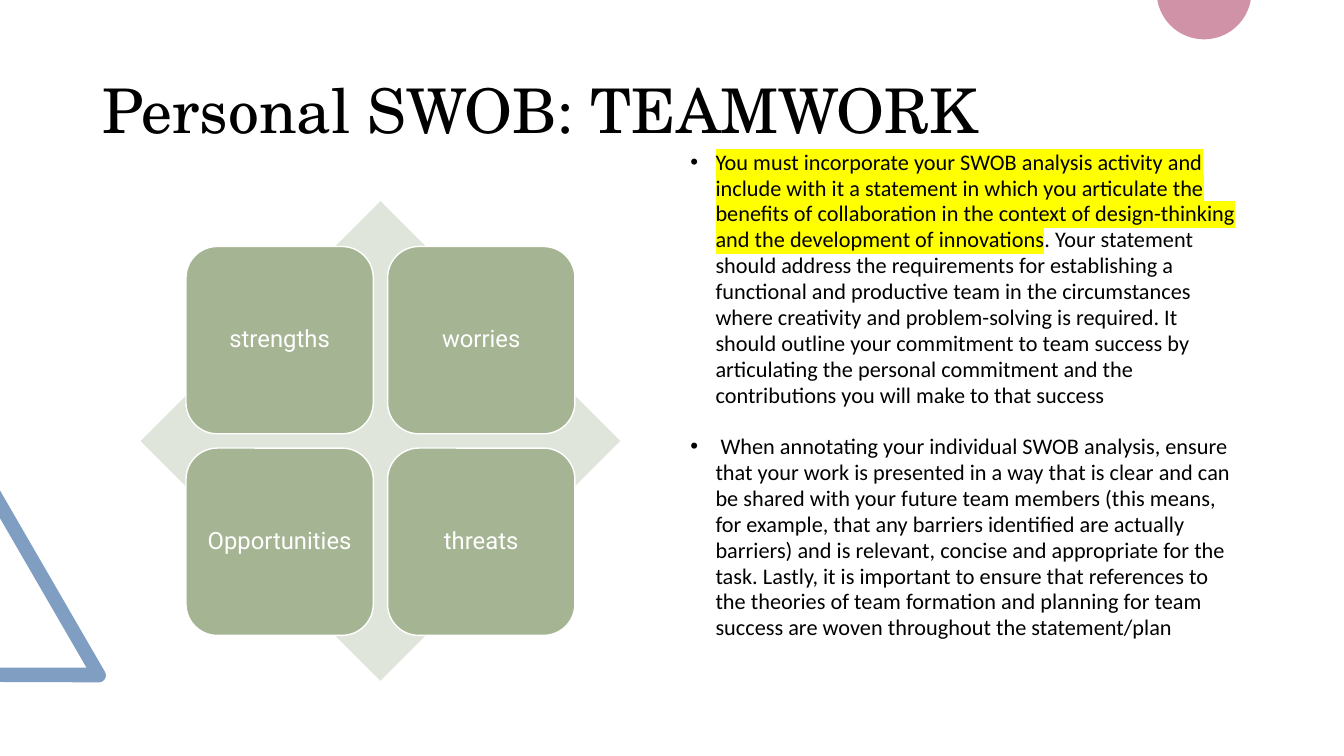
import math

import lxml.etree
import pptx
import pptx.dml.color
import pptx.enum.shapes
import pptx.enum.text
import pptx.oxml.ns
import pptx.util

COLORS = {
    "triangle": "809EC2", "circle": "D092A7", "diamond": "E0E5DB",
    "tile": "A5B492", "white": "FFFFFF", "black": "000000", "marker": "FFFF00",
}
COLUMNS, ROWS = 160, 90
UNIT = pptx.util.Pt(6)  # side of one square grid cell
SHAPES = pptx.enum.shapes.MSO_SHAPE
MIDDLE = pptx.enum.text.MSO_ANCHOR.MIDDLE


def rgb(name):
    return pptx.dml.color.RGBColor.from_string(COLORS[name])


def add_span(para, text, font, size, color):
    span = para.add_run()
    span.text = text
    span.font.name = font
    span.font.size = pptx.util.Pt(size)
    span.font.color.rgb = rgb(color)
    return span


deck = pptx.Presentation()
deck.slide_width = COLUMNS * UNIT
deck.slide_height = ROWS * UNIT
page = deck.slides.add_slide(deck.slide_layouts[6])

# Corner decorations: straight outline points, then an arc
# (centre column, centre row, radius, first and last angle)
decorations = [
    ("triangle", [(0, 81.2), (0, 79.5), (10.3, 79.5), (0, 61.7), (0, 58.4)],
     (11.76, 80.4, 0.84, -30, 90)),
    ("circle", [], (143.34, -0.96, 5.64, 9.8, 170.2)),
]
ARC_STEPS = 48
for color, points, (column, row, radius, first, last) in decorations:
    outline = list(points)
    for step in range(ARC_STEPS + 1):
        angle = math.radians(first + (last - first) * step / ARC_STEPS)
        outline.append((column + radius * math.cos(angle), row + radius * math.sin(angle)))
    outline = [(x * UNIT, y * UNIT) for x, y in outline]
    builder = page.shapes.build_freeform(*outline[0])
    builder.add_line_segments(outline[1:], close=True)
    decoration = builder.convert_to_shape()
    decoration.shadow.inherit = False
    decoration.fill.solid()
    decoration.fill.fore_color.rgb = rgb(color)
    decoration.line.fill.background()

# Title
title = page.shapes.add_textbox(
    *(int(cells * UNIT) for cells in (11, 4.8, 138, 17.4))).text_frame
title.word_wrap = True
title.vertical_anchor = MIDDLE
title.paragraphs[0].line_spacing = 0.9
add_span(title.paragraphs[0], "Personal SWOB: TEAMWORK", "TeX Gyre Schola", 44, "black")

# Matrix: four tiles around the centre of a diamond
CENTER_COLUMN, CENTER_ROW = 45.3, 52.5
DIAMOND, TILE, PITCH = 57.1, 22.3, 24
diamond = page.shapes.add_shape(
    SHAPES.DIAMOND, int((CENTER_COLUMN - DIAMOND / 2) * UNIT),
    int((CENTER_ROW - DIAMOND / 2) * UNIT), int(DIAMOND * UNIT), int(DIAMOND * UNIT))
diamond.shadow.inherit = False
diamond.fill.solid()
diamond.fill.fore_color.rgb = rgb("diamond")
diamond.line.fill.background()

for index, label in enumerate(["strengths", "worries", "Opportunities", "threats"]):
    row, column = divmod(index, 2)
    left = CENTER_COLUMN + (column - 0.5) * PITCH - TILE / 2
    top = CENTER_ROW + (row - 0.5) * PITCH - TILE / 2
    tile = page.shapes.add_shape(
        SHAPES.ROUNDED_RECTANGLE, int(left * UNIT), int(top * UNIT),
        int(TILE * UNIT), int(TILE * UNIT))
    tile.shadow.inherit = False
    tile.fill.solid()
    tile.fill.fore_color.rgb = rgb("tile")
    tile.line.color.rgb = rgb("white")
    tile.line.width = pptx.util.Pt(1)
    frame = tile.text_frame
    frame.word_wrap = True
    frame.vertical_anchor = MIDDLE
    frame.margin_left = frame.margin_right = pptx.util.Inches(0.07)
    frame.margin_top = frame.margin_bottom = pptx.util.Inches(0.07)
    para = frame.paragraphs[0]
    para.alignment = pptx.enum.text.PP_ALIGN.CENTER
    para.line_spacing = 0.9
    add_span(para, label, "Roboto", 17, "white")

# Instructions: each bullet is a list of (text, highlighted)
bullets = [
    [("You must incorporate your SWOB analysis activity and include with it a statement in "
      "which you articulate the benefits of collaboration in the context of design-thinking "
      "and the development of innovations", True),
     (". Your statement should address the requirements for establishing a functional and "
      "productive team in the circumstances where creativity and problem-solving is required. "
      "It should outline your commitment to team success by articulating the personal "
      "commitment and the contributions you will make to that success", False)],
    [(" When annotating your individual SWOB analysis, ensure that your work is presented in "
      "a way that is clear and can be shared with your future team members (this means, for "
      "example, that any barriers identified are actually barriers) and is relevant, concise "
      "and appropriate for the task. Lastly, it is important to ensure that references to the "
      "theories of team formation and planning for team success are woven throughout the "
      "statement/plan", False)],
]
qn = pptx.oxml.ns.qn
body = page.shapes.add_textbox(
    *(int(cells * UNIT) for cells in (81, 17.2, 68, 63.8))).text_frame
body.word_wrap = True
for index, spans in enumerate(bullets):
    para = body.add_paragraph() if index else body.paragraphs[0]
    para.line_spacing = 0.97
    para.space_before = pptx.util.Pt(18 * index)
    properties = para._p.get_or_add_pPr()
    properties.set("marL", str(3 * UNIT))
    properties.set("indent", str(-3 * UNIT))
    bullet_color = lxml.etree.SubElement(properties, qn("a:buClr"))
    lxml.etree.SubElement(bullet_color, qn("a:srgbClr"), val=COLORS["black"])
    lxml.etree.SubElement(properties, qn("a:buFont"), typeface="Arial")
    lxml.etree.SubElement(properties, qn("a:buChar"), char="•")
    for text, highlighted in spans:
        span = add_span(para, text, "Calibri", 15.9, "black")
        if highlighted:
            highlight = lxml.etree.Element(qn("a:highlight"))
            lxml.etree.SubElement(highlight, qn("a:srgbClr"), val=COLORS["marker"])
            span._r.rPr.find(qn("a:solidFill")).addnext(highlight)

deck.save("out.pptx")
